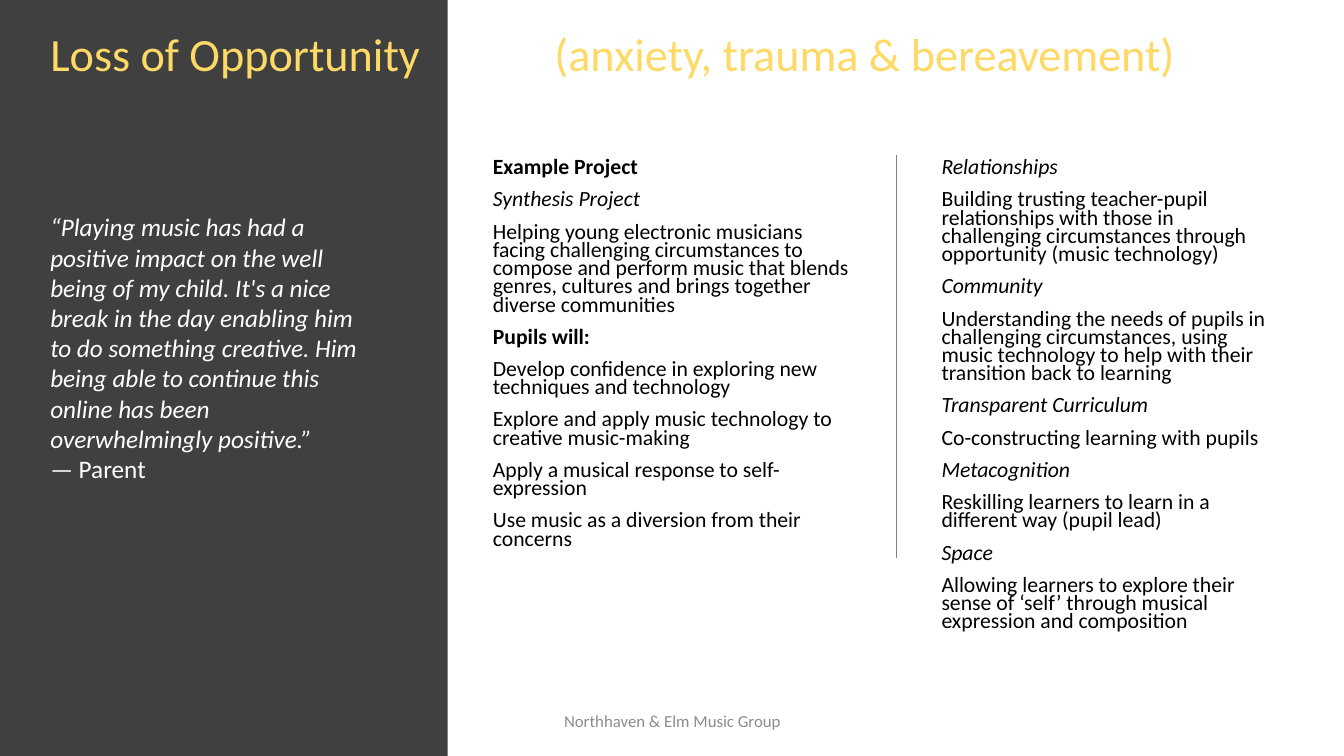
from lxml import etree
from pptx import Presentation
from pptx.dml.color import RGBColor
from pptx.enum.shapes import MSO_CONNECTOR, MSO_SHAPE
from pptx.enum.text import MSO_ANCHOR, PP_ALIGN
from pptx.oxml.ns import qn
from pptx.util import Emu, Pt

PX = 9144
CHARCOAL = RGBColor(0x40, 0x40, 0x40)
GOLD = RGBColor(0xFF, 0xD9, 0x66)
BLACK = RGBColor(0x00, 0x00, 0x00)
WHITE = RGBColor(0xFF, 0xFF, 0xFF)
RULE_GREY = RGBColor(0x80, 0x80, 0x80)
FOOTER_GREY = RGBColor(0x8C, 0x8C, 0x8C)

PLAIN, BOLD, ITALIC = {}, {"bold": True}, {"italic": True}
BODY_PARAGRAPH = {"line_spacing": 0.7, "space_before": Pt(10)}

PROJECT = [
    ("Example Project", BOLD),
    ("Synthesis Project", ITALIC),
    ("Helping young electronic musicians facing challenging circumstances to compose "
     "and perform music that blends genres, cultures and brings together diverse "
     "communities", PLAIN),
    ("Pupils will:", BOLD),
    ("Develop confidence in exploring new techniques and technology", PLAIN),
    ("Explore and apply music technology to creative music-making", PLAIN),
    ("Apply a musical response to self-expression", PLAIN),
    ("Use music as a diversion from their concerns", PLAIN),
]
THEMES = [
    ("Relationships", ITALIC),
    ("Building trusting teacher-pupil relationships with those in challenging "
     "circumstances through opportunity (music technology)", PLAIN),
    ("Community", ITALIC),
    ("Understanding the needs of pupils in challenging circumstances, using music "
     "technology to help with their transition back to learning", PLAIN),
    ("Transparent Curriculum", ITALIC),
    ("Co-constructing learning with pupils", PLAIN),
    ("Metacognition", ITALIC),
    ("Reskilling learners to learn in a different way (pupil lead)", PLAIN),
    ("Space", ITALIC),
    ("Allowing learners to explore their sense of ‘self’ through musical expression "
     "and composition", PLAIN),
]
QUOTE = [
    ("“Playing music has had a positive impact on the well being of my child. It's a "
     "nice break in the day enabling him to do something creative. Him being able to "
     "continue this online has been overwhelmingly positive.”", ITALIC),
    ("— Parent", PLAIN),
]


def px(n):
    """Turn pixels into EMU."""
    return Emu(n * PX)


def apply(target, values):
    """Set each named attribute on the target."""
    for name, value in values.items():
        setattr(target, name, value)


def add_text(s, box, lines, size, color, paragraph=PLAIN, anchor=MSO_ANCHOR.TOP):
    """Fill a text box with styled paragraphs and return its frame."""
    tf = s.shapes.add_textbox(*map(px, box)).text_frame
    apply(tf, {"word_wrap": True, "vertical_anchor": anchor})
    for i, (text, style) in enumerate(lines):
        p = tf.paragraphs[0] if i == 0 else tf.add_paragraph()
        apply(p, paragraph)
        r = p.add_run()
        r.text = text
        apply(r.font, {"name": "Calibri", "size": Pt(size), **style})
        r.font.color.rgb = color
    return tf


def add_title(s, box):
    """Place the two-part heading with a tab stop between its parts."""
    lines = [("Loss of Opportunity\t(anxiety, trauma & bereavement)", PLAIN)]
    tf = add_text(s, box, lines, 33, GOLD, {"line_spacing": 0.9})
    tabs = etree.SubElement(tf.paragraphs[0]._p.get_or_add_pPr(), qn("a:tabLst"))
    etree.SubElement(tabs, qn("a:tab"), pos=str(px(500)), algn="l")


def add_side_panel(s, box):
    """Draw the dark panel."""
    sp = s.shapes.add_shape(MSO_SHAPE.RECTANGLE, *map(px, box))
    sp.shadow.inherit = False
    sp.fill.solid()
    sp.fill.fore_color.rgb = CHARCOAL
    sp.line.fill.background()


def add_quote(s, box):
    """Place the parent's words on the panel."""
    add_text(s, box, QUOTE, 18, WHITE)


def add_columns(s, box):
    """Place the two body columns with a rule between them."""
    left, top, width, height = box
    add_text(s, (left, top, 375, height), PROJECT, 15.5, BLACK, BODY_PARAGRAPH)
    add_text(s, (left + width - 350, top, 350, height), THEMES, 15.5, BLACK,
             BODY_PARAGRAPH)
    x = left + 410
    rule = s.shapes.add_connector(MSO_CONNECTOR.STRAIGHT,
                                  px(x), px(top), px(x), px(top + 400))
    rule.line.color.rgb = RULE_GREY
    rule.line.width = Pt(1)
    etree.SubElement(rule._element.spPr, qn("a:effectLst"))


def add_footer(s, box):
    """Place the centred footer."""
    add_text(s, box, [("Northhaven & Elm Music Group", PLAIN)], 12, FOOTER_GREY,
             {"alignment": PP_ALIGN.CENTER}, MSO_ANCHOR.MIDDLE)


def main():
    """Build and save the slide."""
    prs = Presentation()
    apply(prs, {"slide_width": px(1333), "slide_height": px(750)})
    s = prs.slides.add_slide(prs.slide_layouts[6])
    add_side_panel(s, (0, 0, 444, 750))
    add_title(s, (40, 26, 1139, 166))
    add_columns(s, (479, 154, 795, 570))
    add_footer(s, (442, 695, 450, 40))
    add_quote(s, (40, 205, 331, 313))
    prs.save("out.pptx")


if __name__ == "__main__":
    main()
